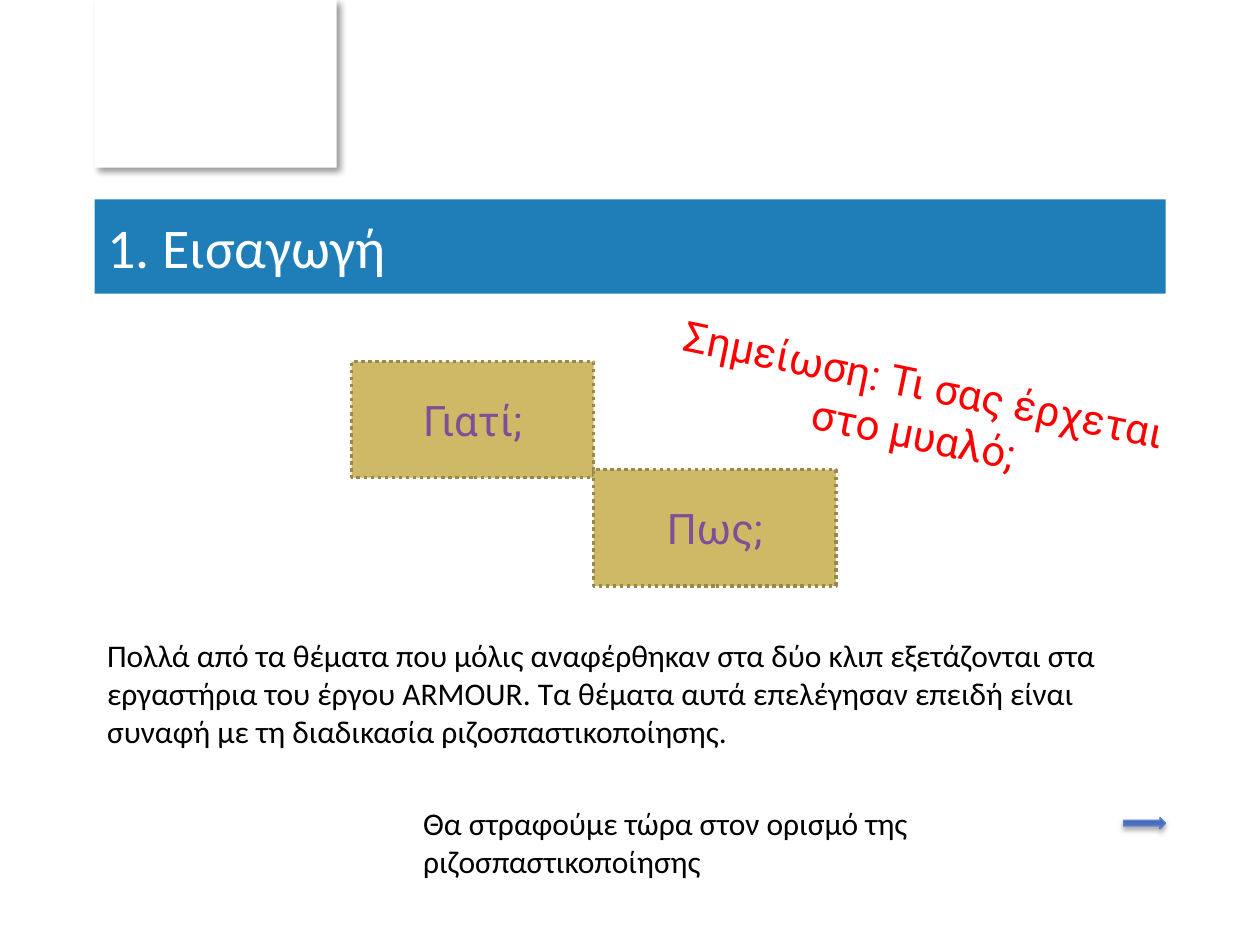
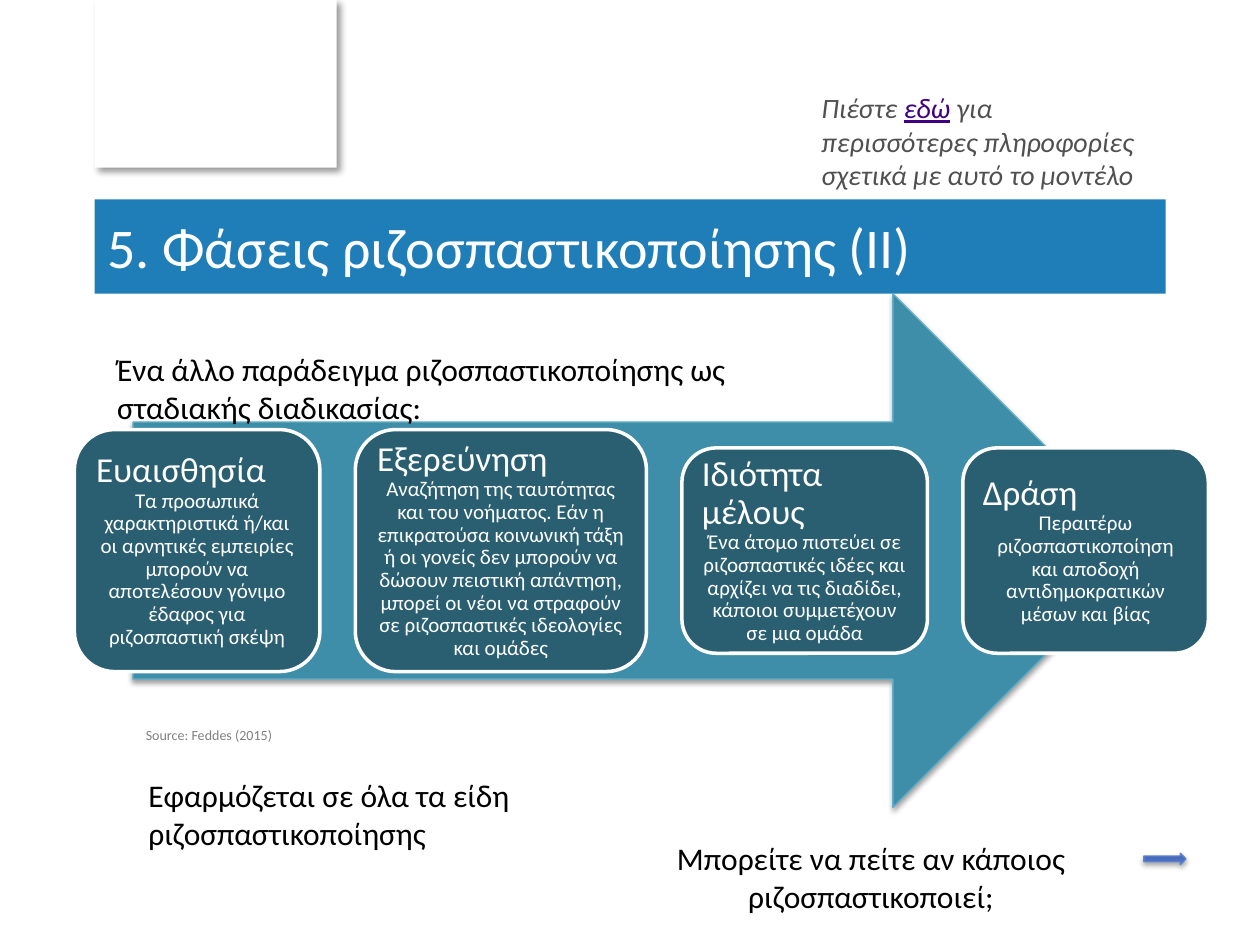
from dataclasses import dataclass

from lxml.etree import SubElement
from pptx import Presentation
from pptx.dml.color import RGBColor
from pptx.enum.dml import MSO_LINE_DASH_STYLE as Dash
from pptx.enum.shapes import MSO_SHAPE as Shape
from pptx.enum.text import MSO_ANCHOR as Anchor, PP_ALIGN as Align
from pptx.oxml.ns import qn
from pptx.util import Cm, Pt


@dataclass(frozen=True)
class Theme:
    font: str = "Calibri"
    accent_font: str = "Roboto"
    white: str = "FFFFFF"
    black: str = "000000"
    band: str = "0770B1"
    step: str = "CEB966"
    step_line: str = "98894B"
    step_text: str = "7E4E99"
    note: str = "FF0000"
    hint: str = "505050"
    link: str = "410082"
    source: str = "808080"
    arrow: str = "3E8EA9"
    arrow_line: str = "66AEC7"
    card: str = "295F71"
    next_dark: str = "405FA6"
    next_light: str = "527BD8"
    next_line: str = "6081CD"
    title_size: int = 32
    step_size: int = 24
    heading_size: int = 20
    body_size: int = 18
    hint_size: int = 16
    card_size: int = 12
    source_size: int = 8


@dataclass(frozen=True)
class Box:
    left: float
    top: float
    width: float
    height: float

    def lengths(self):
        return [Cm(v) for v in (self.left, self.top, self.width, self.height)]


THEME = Theme()
LOGO = Box(1.91, 0, 4.88, 3.38)
BAND = Box(1.91, 4.02, 21.59, 1.9)
PHASES = [
    ("Ευαισθησία",
     "Τα προσωπικά χαρακτηριστικά ή/και οι αρνητικές εμπειρίες μπορούν να "
     "αποτελέσουν γόνιμο έδαφος για ριζοσπαστική σκέψη", 4.95, 4.88),
    ("Εξερεύνηση",
     "Αναζήτηση της ταυτότητας και του νοήματος. Εάν η επικρατούσα κοινωνική "
     "τάξη ή οι γονείς δεν μπορούν να δώσουν πειστική απάντηση, μπορεί οι νέοι "
     "να στραφούν σε ριζοσπαστικές ιδεολογίες και ομάδες", 5.87, 4.88),
    ("Ιδιότητα μέλους",
     "Ένα άτομο πιστεύει σε ριζοσπαστικές ιδέες και αρχίζει να τις διαδίδει, "
     "κάποιοι συμμετέχουν σε μια ομάδα", 4.95, 4.14),
    ("Δράση",
     "Περαιτέρω ριζοσπαστικοποίηση και αποδοχή αντιδημοκρατικών μέσων και βίας",
     4.95, 4.14),
]


def rgb(color):
    return RGBColor.from_string(color)


def format_font(font, size, color, name=THEME.font):
    font.size = Pt(size)
    font.name = name
    font.color.rgb = rgb(color)


def format_para(para, size, color, align=Align.LEFT, name=THEME.font):
    para.alignment = align
    for span in para.runs:
        format_font(span.font, size, color, name)


def add_shadow(shape, alpha, blur, distance, angle):
    effects = shape._element.spPr.find(qn("a:effectLst"))
    shadow = SubElement(effects, qn("a:outerShdw"), blurRad=str(Pt(blur)),
                        dist=str(Pt(distance)), dir=str(angle * 60000),
                        rotWithShape="0")
    color = SubElement(shadow, qn("a:srgbClr"), val=THEME.black)
    SubElement(color, qn("a:alpha"), val=str(alpha * 1000))


def add_block(page, kind, box, fill, line=None, weight=0.75):
    shape = page.shapes.add_shape(kind, *box.lengths())
    shape.shadow.inherit = False
    shape.fill.solid()
    shape.fill.fore_color.rgb = rgb(fill)
    if line:
        shape.line.color.rgb = rgb(line)
        shape.line.width = Pt(weight)
    else:
        shape.line.fill.background()
    return shape


def add_text(page, box, text, size=THEME.body_size, color=THEME.black,
             align=Align.LEFT, name=THEME.font):
    shape = page.shapes.add_textbox(*box.lengths())
    shape.text_frame.word_wrap = True
    shape.text_frame.text = text
    format_para(shape.text_frame.paragraphs[0], size, color, align, name)
    return shape


def add_page(deck, heading):
    page = deck.slides.add_slide(deck.slide_layouts[5])
    logo = add_block(page, Shape.RECTANGLE, LOGO, THEME.white)
    add_shadow(logo, 40, 4, 3, 45)
    title = page.shapes.title
    title.left, title.top, title.width, title.height = BAND.lengths()
    title.fill.solid()
    title.fill.fore_color.rgb = rgb(THEME.band)
    color = title._element.spPr.find(qn("a:solidFill"))[0]
    SubElement(color, qn("a:alpha"), val="90000")
    title.text_frame.text = heading
    title.text_frame.vertical_anchor = Anchor.MIDDLE
    format_para(title.text_frame.paragraphs[0], THEME.title_size, THEME.white)
    return page


def add_next_arrow(page, left, top):
    arrow = add_block(page, Shape.RIGHT_ARROW, Box(left, top, 0.85, 0.23),
                      THEME.next_light, THEME.next_line)
    arrow.fill.gradient()
    arrow.fill.gradient_angle = 270
    for stop, color in zip(arrow.fill.gradient_stops,
                           (THEME.next_dark, THEME.next_light)):
        stop.color.rgb = rgb(color)
    add_shadow(arrow, 35, 3.1, 1.8, 90)


def add_steps(page, box, labels):
    width, height = box.width / len(labels), 2.34
    drop = (box.height - height) / (len(labels) - 1)
    for index, label in enumerate(labels):
        place = Box(box.left + index * width, box.top + index * drop, width, height)
        step = add_block(page, Shape.RECTANGLE, place, THEME.step,
                         THEME.step_line, 2)
        step.line.dash_style = Dash.ROUND_DOT
        step.text_frame.text = label
        step.text_frame.vertical_anchor = Anchor.MIDDLE
        format_para(step.text_frame.paragraphs[0], THEME.step_size,
                    THEME.step_text, Align.CENTER, THEME.accent_font)


def add_card(page, box, heading, body):
    card = add_block(page, Shape.ROUNDED_RECTANGLE, box, THEME.card, THEME.white, 2)
    frame = card.text_frame
    frame.word_wrap = True
    frame.vertical_anchor = Anchor.MIDDLE
    frame.margin_left = frame.margin_right = Cm(0.2)
    frame.margin_top = frame.margin_bottom = Cm(0.2)
    frame.text = heading
    format_para(frame.paragraphs[0], THEME.heading_size, THEME.white)
    para = frame.add_paragraph()
    para.text = body
    format_para(para, THEME.card_size, THEME.white, Align.CENTER)
    for para in frame.paragraphs:
        para.line_spacing = 0.9


def add_phases(page, box):
    arrow_width = 20.5
    arrow_box = Box(box.left + (box.width - arrow_width) / 2, box.top,
                    arrow_width, box.height)
    arrow = add_block(page, Shape.RIGHT_ARROW, arrow_box, THEME.arrow,
                      THEME.arrow_line)
    add_shadow(arrow, 38, 3.1, 1.6, 90)
    gap = (box.width - sum(phase[2] for phase in PHASES)) / (len(PHASES) - 1)
    left = box.left
    for heading, body, width, height in PHASES:
        top = box.top + (box.height - height) / 2
        add_card(page, Box(left, top, width, height), heading, body)
        left += width + gap


def add_hint(page, box):
    hint = add_text(page, box, "Πιέστε ")
    para = hint.text_frame.paragraphs[0]
    for text in ("εδώ", " για περισσότερες πληροφορίες σχετικά με αυτό το μοντέλο"):
        para.add_run().text = text
    format_para(para, THEME.hint_size, THEME.hint)
    for span in para.runs:
        span.font.italic = True
    link = para.runs[1].font
    link.underline = True
    link.color.rgb = rgb(THEME.link)


def build_introduction(deck):
    page = add_page(deck, "1. Εισαγωγή")
    add_steps(page, Box(7.09, 7.29, 9.76, 4.52), ["Γιατί;", "Πως;"])
    note = add_text(page, Box(13.34, 7.09, 10.36, 2.31),
                    "Σημείωση: Τι σας έρχεται στο μυαλό;", THEME.step_size,
                    THEME.note, Align.CENTER, THEME.accent_font)
    note.rotation = 11.6
    add_text(page, Box(1.91, 12.7, 21, 3.33),
             "Πολλά από τα θέματα που μόλις αναφέρθηκαν στα δύο κλιπ εξετάζονται "
             "στα εργαστήρια του έργου ARMOUR. Τα θέματα αυτά επελέγησαν επειδή "
             "είναι συναφή με τη διαδικασία ριζοσπαστικοποίησης.")
    add_text(page, Box(8.28, 16.08, 14.6, 2.57),
             "Θα στραφούμε τώρα στον ορισμό της ριζοσπαστικοποίησης")
    add_next_arrow(page, 22.65, 16.48)


def build_phases(deck):
    page = add_page(deck, "5. Φάσεις ριζοσπαστικοποίησης (ΙΙ)")
    add_text(page, Box(2.69, 14.53, 5.79, 0.61), "Source: Feddes (2015)",
             THEME.source_size, THEME.source)
    add_phases(page, Box(1.5, 5.92, 22.86, 10.36))
    add_text(page, Box(2.74, 15.52, 12.04, 1.8),
             "Εφαρμόζεται σε όλα τα είδη ριζοσπαστικοποίησης")
    add_text(page, Box(2.11, 6.93, 15.04, 2.57),
             "Ένα άλλο παράδειγμα ριζοσπαστικοποίησης ως σταδιακής διαδικασίας:")
    add_text(page, Box(11.63, 16.79, 11.86, 1.8),
             "Μπορείτε να πείτε αν κάποιος ριζοσπαστικοποιεί;", align=Align.CENTER)
    add_next_arrow(page, 23.06, 17.2)
    add_hint(page, Box(16.31, 1.7, 7.19, 2.31))


def main():
    deck = Presentation()
    deck.slide_width, deck.slide_height = Cm(25.4), Cm(19.05)
    build_introduction(deck)
    build_phases(deck)
    deck.save("out.pptx")


if __name__ == "__main__":
    main()
